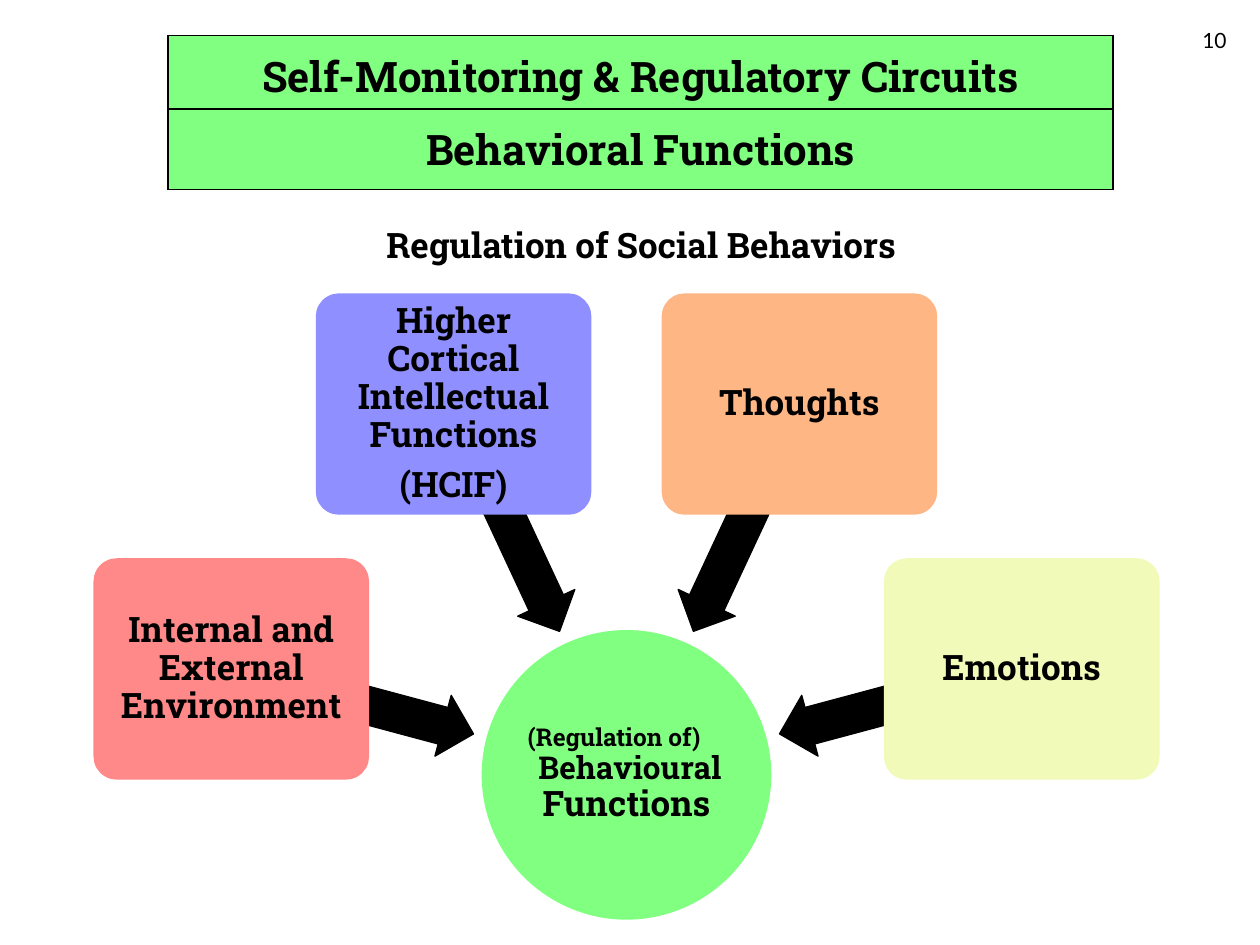
from dataclasses import dataclass
from math import cos, radians, sin

from lxml import etree
from pptx import Presentation
from pptx.dml.color import RGBColor
from pptx.enum import shapes, text
from pptx.oxml import ns
from pptx.util import Pt


@dataclass(frozen=True)
class Theme:
    font: str = "Roboto Slab"
    number_font: str = "Lato"
    ink: str = "000000"
    green: str = "81FF81"
    red: str = "FF8989"
    blue: str = "8F8FFF"
    orange: str = "FFB685"
    yellow: str = "F1FAB8"
    banner_size: int = 24
    text_size: int = 20
    medium_size: int = 18
    small_size: int = 14
    number_size: int = 12


THEME = Theme()

# Radial layout: every card and its arrow share one angle around the hub
HUB_X, HUB_Y, HUB_SIZE = 358, 442.8, 164
CARD_RADIUS, CARD_WIDTH, CARD_HEIGHT = 233.8, 156, 125
ARROW_RADIUS, ARROW_LENGTH, ARROW_THICKNESS = 162, 143, 36
FIRST_ANGLE, ANGLE_STEP = 195, 50

CARDS = [
    ("Internal and External Environment", THEME.red),
    ("Higher Cortical Intellectual Functions\n(HCIF)", THEME.blue),
    ("Thoughts", THEME.orange),
    ("Emotions", THEME.yellow),
]

# Hub lines: words, size, left indent, right indent
HUB_LINES = [
    ("(Regulation of)", THEME.small_size, 0, 14),
    ("Behavioural", THEME.medium_size, 4, 0),
    ("Functions", THEME.text_size, 0, 0),
]


def format_paragraph(paragraph, size=THEME.text_size, font=THEME.font, bold=True,
                     align=text.PP_ALIGN.CENTER):
    paragraph.alignment = align
    for run in paragraph.runs:
        run.font.name = font
        run.font.size = Pt(size)
        run.font.bold = bold
        run.font.color.rgb = RGBColor.from_string(THEME.ink)


def set_margins(target, horizontal, vertical):
    target.margin_left = target.margin_right = Pt(horizontal)
    target.margin_top = target.margin_bottom = Pt(vertical)


def add_centred_shape(slide, kind, x, y, width, height, color, line_width):
    shape = slide.shapes.add_shape(kind, Pt(x - width / 2), Pt(y - height / 2),
                                   Pt(width), Pt(height))
    shape.shadow.inherit = False
    shape.fill.solid()
    shape.fill.fore_color.rgb = RGBColor.from_string(color)
    shape.line.color.rgb = RGBColor.from_string(color)
    shape.line.width = Pt(line_width)
    return shape


def fill_text(shape, words, margin):
    frame = shape.text_frame
    frame.word_wrap = True
    frame.vertical_anchor = text.MSO_ANCHOR.MIDDLE
    set_margins(frame, margin, margin)
    frame.text = words
    for paragraph in frame.paragraphs:
        paragraph.line_spacing = 0.9
        format_paragraph(paragraph)
    return frame.paragraphs


def add_heading(slide):
    title = slide.shapes.title
    title.left, title.top, title.width, title.height = Pt(162), Pt(124), Pt(373), Pt(53)
    frame = title.text_frame
    frame.auto_size = text.MSO_AUTO_SIZE.NONE
    frame.word_wrap = True
    frame.vertical_anchor = text.MSO_ANCHOR.TOP
    frame.text = "Regulation of Social Behaviors"
    paragraph = frame.paragraphs[0]
    paragraph.space_before = Pt(0)
    paragraph.line_spacing = 1.0
    paragraph._p.get_or_add_pPr().set("indent", str(Pt(36)))
    format_paragraph(paragraph)


def add_hub(slide):
    hub = add_centred_shape(slide, shapes.MSO_SHAPE.OVAL, HUB_X, HUB_Y,
                            HUB_SIZE, HUB_SIZE, THEME.green, 1.5)
    paragraphs = fill_text(hub, "\n".join(line[0] for line in HUB_LINES), 1)
    for paragraph, (_, size, left, right) in zip(paragraphs, HUB_LINES):
        format_paragraph(paragraph, size)
        # Both indents are set on each line so that none carries over
        properties = paragraph._p.get_or_add_pPr()
        properties.set("marL", str(Pt(left)))
        properties.set("marR", str(Pt(right)))
        properties.set("indent", "0")


def add_arrow(slide, angle):
    x = HUB_X + ARROW_RADIUS * cos(radians(angle))
    y = HUB_Y + ARROW_RADIUS * sin(radians(angle))
    arrow = add_centred_shape(slide, shapes.MSO_SHAPE.LEFT_ARROW, x, y,
                              ARROW_LENGTH, ARROW_THICKNESS, THEME.ink, 0.75)
    arrow.adjustments[0] = 0.6
    arrow.adjustments[1] = 0.5
    arrow.rotation = angle


def add_card(slide, angle, words, color):
    x = HUB_X + CARD_RADIUS * cos(radians(angle))
    y = HUB_Y + CARD_RADIUS * sin(radians(angle))
    card = add_centred_shape(slide, shapes.MSO_SHAPE.ROUNDED_RECTANGLE, x, y,
                             CARD_WIDTH, CARD_HEIGHT, color, 1.5)
    card.adjustments[0] = 0.1
    for paragraph in fill_text(card, words, 3):
        paragraph.space_after = Pt(7)


def add_borders(cell):
    properties = cell._tc.get_or_add_tcPr()
    for position, side in enumerate(("lnL", "lnR", "lnT", "lnB")):
        line = etree.Element(ns.qn(f"a:{side}"), w=str(Pt(1)))
        fill = etree.SubElement(line, ns.qn("a:solidFill"))
        etree.SubElement(fill, ns.qn("a:srgbClr"), val=THEME.ink)
        properties.insert(position, line)


def add_banner(slide):
    rows = [("Self-Monitoring & Regulatory Circuits", 42, 1.15),
            ("Behavioral Functions", 46, 1.0)]
    table = slide.shapes.add_table(len(rows), 1, Pt(96), Pt(20.2), Pt(540), Pt(88)).table
    table.first_row = table.horz_banding = False
    for index, (words, height, spacing) in enumerate(rows):
        table.rows[index].height = Pt(height)
        cell = table.cell(index, 0)
        cell.fill.solid()
        cell.fill.fore_color.rgb = RGBColor.from_string(THEME.green)
        cell.vertical_anchor = text.MSO_ANCHOR.MIDDLE
        set_margins(cell, 5, 0)
        add_borders(cell)
        cell.text_frame.text = words
        paragraph = cell.text_frame.paragraphs[0]
        paragraph.line_spacing = spacing
        format_paragraph(paragraph, THEME.banner_size)


def add_page_number(slide):
    box = slide.shapes.add_textbox(Pt(648), Pt(12), Pt(60), Pt(20))
    box.text_frame.word_wrap = True
    box.text_frame.text = "10"
    format_paragraph(box.text_frame.paragraphs[0], THEME.number_size,
                     THEME.number_font, False, text.PP_ALIGN.RIGHT)


def main():
    presentation = Presentation()
    presentation.slide_width, presentation.slide_height = Pt(720), Pt(540)
    slide = presentation.slides.add_slide(presentation.slide_layouts[5])

    # Heading and hub
    add_heading(slide)
    add_hub(slide)

    # Influences around the hub, each card covering the tail of its arrow
    for index, (words, color) in enumerate(CARDS):
        angle = FIRST_ANGLE + index * ANGLE_STEP
        add_arrow(slide, angle)
        add_card(slide, angle, words, color)

    # Banner and page number
    add_banner(slide)
    add_page_number(slide)
    presentation.save("out.pptx")


if __name__ == "__main__":
    main()
